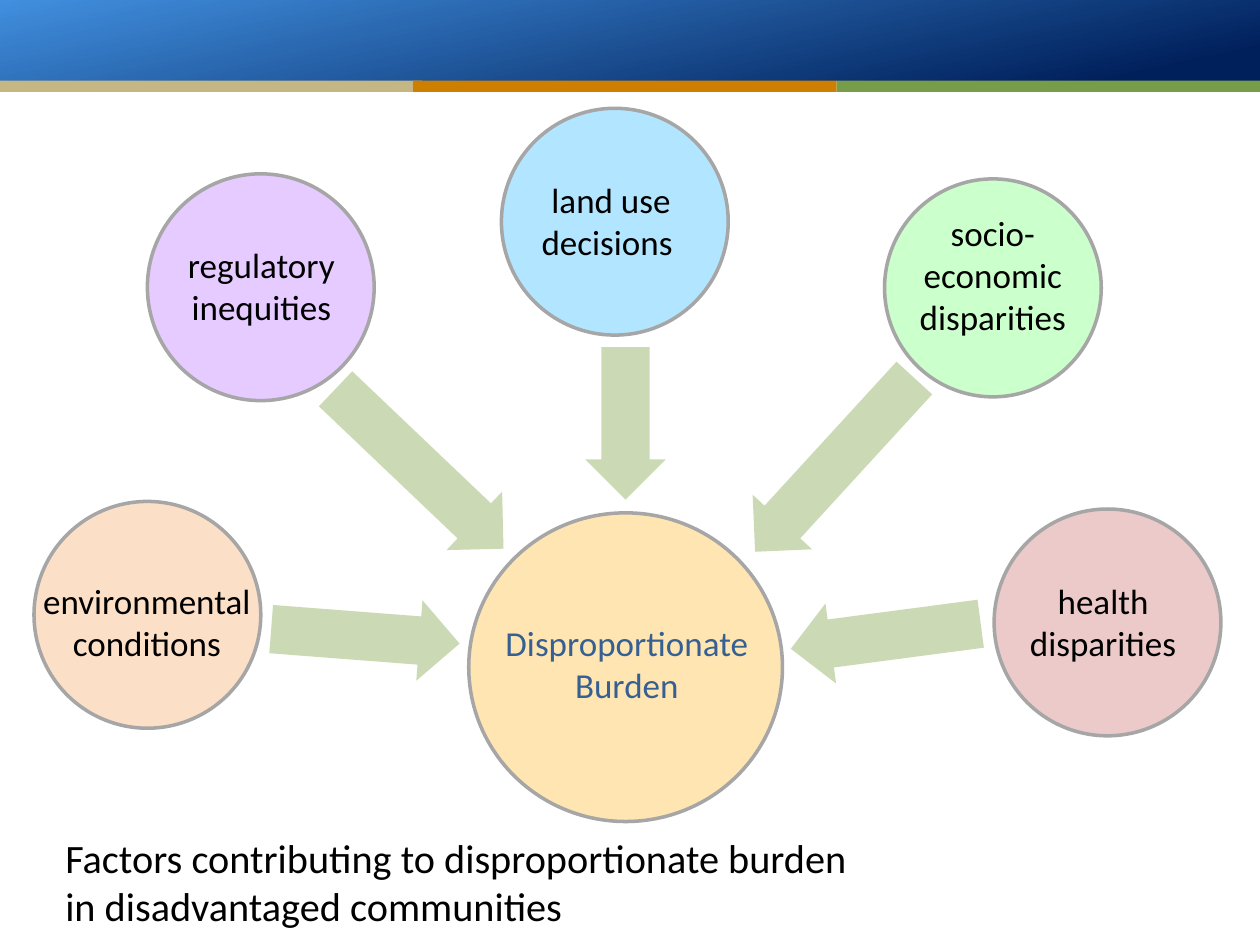
"""Build a slide of factors that lead to a disproportionate burden."""
from dataclasses import dataclass

import pptx
import pptx.dml.color
import pptx.enum.shapes
import pptx.enum.text
import pptx.oxml
import pptx.oxml.ns
import pptx.util

Inches = pptx.util.Inches
Box = tuple[float, float, float, float]
SHAPES = pptx.enum.shapes.MSO_SHAPE
ALIGN = pptx.enum.text.PP_ALIGN
ANCHOR = pptx.enum.text.MSO_ANCHOR
BLACK = "000000"


@dataclass
class Circle:
    box: Box
    fill: str
    label_box: Box
    lines: list[str]
    color: str = BLACK
    wrap: bool = True


@dataclass
class Arrow:
    left: float
    top: float
    length: float
    rotation: float


CIRCLES = [
    Circle((3.98, 0.86, 1.8, 1.8), "66CCFF", (3.98, 1.37, 1.74, 0.77), ["land use decisions "]),
    Circle((3.72, 4.07, 2.49, 2.45), "FFCC66", (3.88, 4.88, 2.19, 0.77),
           ["Disproportionate", "Burden"], "376092", False),
    Circle((1.17, 1.38, 1.8, 1.8), "CC99FF", (1.21, 1.88, 1.73, 0.77), ["regulatory inequities"]),
    Circle((7.89, 4.04, 1.8, 1.8), "D99694", (7.89, 4.55, 1.73, 0.77), ["health disparities"]),
    Circle((7.02, 1.42, 1.72, 1.73), "99FF99", (6.98, 1.63, 1.8, 1.11),
           ["socio-", "economic disparities"]),
    Circle((0.27, 3.98, 1.8, 1.8), "FAC090", (0.17, 4.55, 1.99, 0.77),
           ["environmental conditions"]),
]
ARROWS = [
    Arrow(2.15, 4.73, 1.5, 184.4),
    Arrow(2.41, 3.4, 1.84, 223.6),
    Arrow(4.36, 3.04, 1.21, 270),
    Arrow(5.69, 3.37, 1.87, 312.5),
    Arrow(6.27, 4.73, 1.52, 352.5),
]
STRIPES = [(-0.01, "C5B783"), (3.28, "CF7F00"), (6.64, "789D4A")]


def rgb(value: str) -> pptx.dml.color.RGBColor:
    """Turn a hex string into a colour."""
    return pptx.dml.color.RGBColor.from_string(value)


def add_shape(shapes, kind, box: Box, fill: str):
    """Add a preset shape with a solid fill and no outline."""
    sp = shapes.add_shape(kind, *map(Inches, box))
    sp.shadow.inherit = False
    sp.fill.solid()
    sp.fill.fore_color.rgb = rgb(fill)
    sp.line.fill.background()
    return sp


def add_text(shapes, box: Box, lines: list[str], size: float, color: str = BLACK,
             align=ALIGN.CENTER, anchor=ANCHOR.TOP, wrap: bool = True) -> None:
    """Add a text box with one paragraph for each line."""
    tf = shapes.add_textbox(*map(Inches, box)).text_frame
    for name, value in {"word_wrap": wrap, "vertical_anchor": anchor}.items():
        setattr(tf, name, value)
    for i, line in enumerate(lines):
        p = tf.paragraphs[0] if i == 0 else tf.add_paragraph()
        p.alignment = align
        r = p.add_run()
        r.text = line
        for name, value in {"name": "Calibri", "size": pptx.util.Pt(size)}.items():
            setattr(r.font, name, value)
        r.font.color.rgb = rgb(color)


def add_circle(shapes, circle: Circle) -> None:
    """Add a half-transparent circle grouped with its label."""
    group = shapes.add_group_shape().shapes
    sp = add_shape(group, SHAPES.OVAL, circle.box, circle.fill)
    color = sp.fill._xPr.find(".//" + pptx.oxml.ns.qn("a:srgbClr"))
    color.append(pptx.oxml.parse_xml(
        f'<a:alpha {pptx.oxml.ns.nsdecls("a")} val="50000"/>'))
    sp.line.color.rgb = rgb("A6A6A6")
    sp.line.width = pptx.util.Pt(2)
    add_text(group, circle.label_box, circle.lines, 20, circle.color, wrap=circle.wrap)


def add_arrow(shapes, arrow: Arrow) -> None:
    """Add a rotated block arrow."""
    box = (arrow.left, arrow.top, arrow.length, 0.64)
    sp = add_shape(shapes, SHAPES.LEFT_ARROW, box, "CBDAB5")
    sp.adjustments[0] = 0.6
    sp.adjustments[1] = 0.5
    sp.rotation = arrow.rotation


def add_banner(shapes) -> None:
    """Add the gradient banner and the three stripes below it."""
    sp = add_shape(shapes, SHAPES.RECTANGLE, (0, 0, 10.01, 0.64), "00205B")
    sp.fill.gradient()
    sp.fill.gradient_angle = 102
    for stop, (position, color) in zip(sp.fill.gradient_stops, [(0.09, "00205B"), (1, "418FDE")]):
        stop.position = position
        stop.color.rgb = rgb(color)
    group = shapes.add_group_shape().shapes
    for left, color in STRIPES:
        add_shape(group, SHAPES.RECTANGLE, (left, 0.64, 3.36, 0.09), color)


def main() -> None:
    """Build and save the presentation."""
    prs = pptx.Presentation()
    prs.slide_width, prs.slide_height = Inches(10), Inches(7.5)
    s = prs.slides.add_slide(prs.slide_layouts[6])
    add_banner(s.shapes)
    for circle in CIRCLES:
        add_circle(s.shapes, circle)
    add_text(s.shapes, (0.42, 6.5, 6.6, 0.99),
             ["Factors contributing to disproportionate burden in disadvantaged communities"],
             23, align=ALIGN.LEFT, anchor=ANCHOR.MIDDLE)
    for arrow in ARROWS:
        add_arrow(s.shapes, arrow)
    prs.save("out.pptx")


if __name__ == "__main__":
    main()
